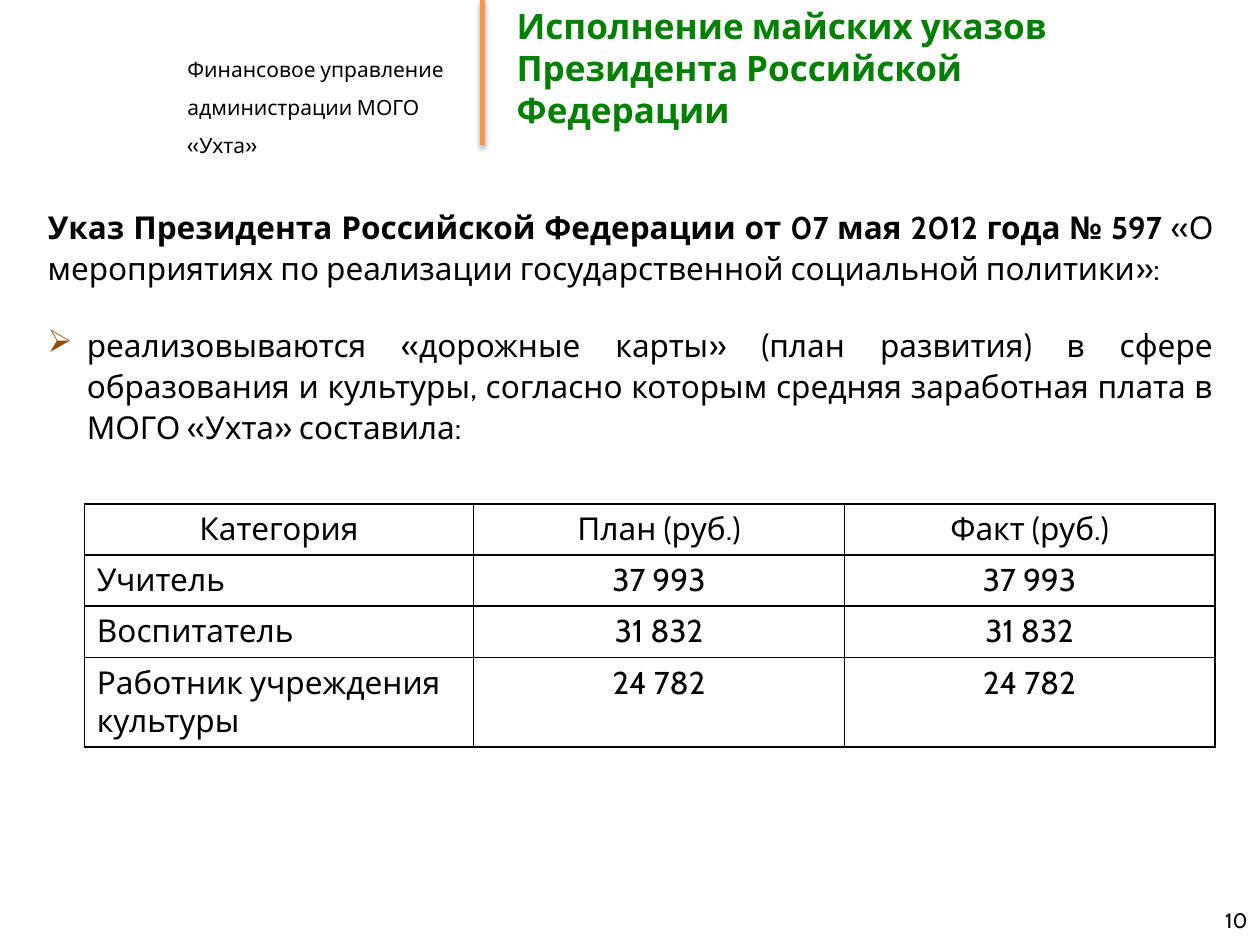
import pptx
import pptx.dml.color
import pptx.enum.shapes
import pptx.enum.text
import pptx.oxml
import pptx.oxml.ns
import pptx.util

Cm = pptx.util.Cm
Pt = pptx.util.Pt
ALIGN = pptx.enum.text.PP_ALIGN
ANCHOR = pptx.enum.text.MSO_ANCHOR
FONT = "Cabin"
COLORS = {"text": "000000", "title": "008000", "divider": "F79646",
          "bullet": "984807", "cell": "FFFFFF"}
TABLE_ROWS = [
    ("Категория", "План (руб.)", "Факт (руб.)"),
    ("Учитель", "37 993", "37 993"),
    ("Воспитатель", "31 832", "31 832"),
    ("Работник учреждения культуры", "24 782", "24 782"),
]


def rgb(name):
    return pptx.dml.color.RGBColor.from_string(COLORS[name])


def append_xml(parent, body):
    """Append one DrawingML element, given as a string without namespace."""
    tag_end = min(body.index(mark) for mark in " >/" if mark in body)
    namespace = " " + pptx.oxml.ns.nsdecls("a")
    parent.append(pptx.oxml.parse_xml(body[:tag_end] + namespace + body[tag_end:]))


def add_span(para, text, size, color="text", bold=False):
    span = para.add_run()
    span.text = text
    span.font.color.rgb = rgb(color)
    values = {"name": FONT, "size": Pt(size), "bold": bold}
    for name, value in values.items():
        setattr(span.font, name, value)


def format_para(para, **values):
    for name, value in values.items():
        setattr(para, name, value)


def prepare_frame(box, anchor=ANCHOR.TOP):
    frame = box.text_frame
    values = {"word_wrap": True, "vertical_anchor": anchor,
              "auto_size": pptx.enum.text.MSO_AUTO_SIZE.NONE}
    for name, value in values.items():
        setattr(frame, name, value)
    return frame


def add_box(page, left, top, width, height, anchor=ANCHOR.TOP):
    box = page.shapes.add_textbox(Cm(left), Cm(top), Cm(width), Cm(height))
    return prepare_frame(box, anchor)


def set_title(page):
    title = page.shapes.title
    place = {"left": 10.16, "top": 0.08, "width": 13.74, "height": 2.57}
    for name, value in place.items():
        setattr(title, name, Cm(value))
    para = prepare_frame(title, ANCHOR.MIDDLE).paragraphs[0]
    format_para(para, alignment=ALIGN.LEFT, space_before=Pt(0))
    add_span(para, "Исполнение майских указов Президента Российской Федерации",
             20, "title", True)


def add_department(page):
    frame = add_box(page, 3.53, 0.76, 6.35, 1.68)
    lines = ("Финансовое управление", "администрации МОГО «Ухта»")
    for index, text in enumerate(lines):
        para = frame.add_paragraph() if index else frame.paragraphs[0]
        format_para(para, line_spacing=1.5)
        add_span(para, text, 12)


def add_divider(page):
    line = page.shapes.add_connector(
        pptx.enum.shapes.MSO_CONNECTOR.STRAIGHT, Cm(9.73), 0, Cm(9.73), Cm(2.92))
    line.line.color.rgb = rgb("divider")
    line.line.width = Pt(3)
    append_xml(line._element.spPr,
               f'<a:effectLst><a:outerShdw blurRad="{Pt(3.1)}" dist="{Pt(1.8)}" '
               'dir="5400000" rotWithShape="0"><a:srgbClr val="000000">'
               '<a:alpha val="35000"/></a:srgbClr></a:outerShdw></a:effectLst>')


def add_bullet(para):
    properties = para._p.get_or_add_pPr()
    properties.set("marL", str(Cm(0.79)))
    properties.set("indent", str(-Cm(0.79)))
    append_xml(properties,
               f'<a:buClr><a:srgbClr val="{COLORS["bullet"]}"/></a:buClr>')
    append_xml(properties, '<a:buChar char="➢"/>')


def add_decree(page):
    frame = add_box(page, 0.71, 3.99, 24, 5.16)
    decree = frame.paragraphs[0]
    format_para(decree, alignment=ALIGN.JUSTIFY, line_spacing=Pt(23.6),
                space_after=Pt(20.5))
    add_span(decree, "Указ Президента Российской Федерации от 07 мая 2012 года № 597 ",
             18, bold=True)
    add_span(decree, "«О мероприятиях по реализации государственной "
             "социальной политики»:", 18)
    measure = frame.add_paragraph()
    add_bullet(measure)
    format_para(measure, alignment=ALIGN.JUSTIFY, line_spacing=Pt(23.4))
    add_span(measure, "реализовываются «дорожные карты» (план развития) в сфере "
             "образования и культуры, согласно которым средняя заработная плата "
             "в МОГО «Ухта» составила:", 18)


def format_cell(cell, text, centred):
    properties = cell._tc.get_or_add_tcPr()
    for side in ("lnL", "lnR", "lnT", "lnB"):
        append_xml(properties, f'<a:{side} w="{Pt(1)}"><a:solidFill><a:srgbClr '
                   f'val="{COLORS["text"]}"/></a:solidFill></a:{side}>')
    cell.fill.solid()
    cell.fill.fore_color.rgb = rgb("cell")
    para = cell.text_frame.paragraphs[0]
    para.alignment = ALIGN.CENTER if centred else ALIGN.LEFT
    add_span(para, text, 18)


def add_salary_table(page):
    widths = (7.85, 7.47, 7.47)
    heights = (1.03, 1.03, 1.03, 1.78)
    table = page.shapes.add_table(len(heights), len(widths), Cm(1.7), Cm(10.16),
                                  Cm(sum(widths)), Cm(sum(heights))).table
    for column, width in zip(table.columns, widths):
        column.width = Cm(width)
    for row, height in zip(table.rows, heights):
        row.height = Cm(height)
    table.first_row = table.horz_banding = False
    for row_index, texts in enumerate(TABLE_ROWS):
        for column_index, text in enumerate(texts):
            format_cell(table.cell(row_index, column_index), text,
                        centred=row_index == 0 or column_index > 0)


def add_page_number(page):
    para = add_box(page, 19.48, 18.03, 5.92, 1.02, ANCHOR.MIDDLE).paragraphs[0]
    para.alignment = ALIGN.RIGHT
    add_span(para, "10", 12)


def main():
    deck = pptx.Presentation()
    deck.slide_width, deck.slide_height = Cm(25.4), Cm(19.05)
    page = deck.slides.add_slide(deck.slide_layouts[5])
    add_department(page)
    add_divider(page)
    set_title(page)
    add_decree(page)
    add_salary_table(page)
    add_page_number(page)
    deck.save("out.pptx")


if __name__ == "__main__":
    main()
